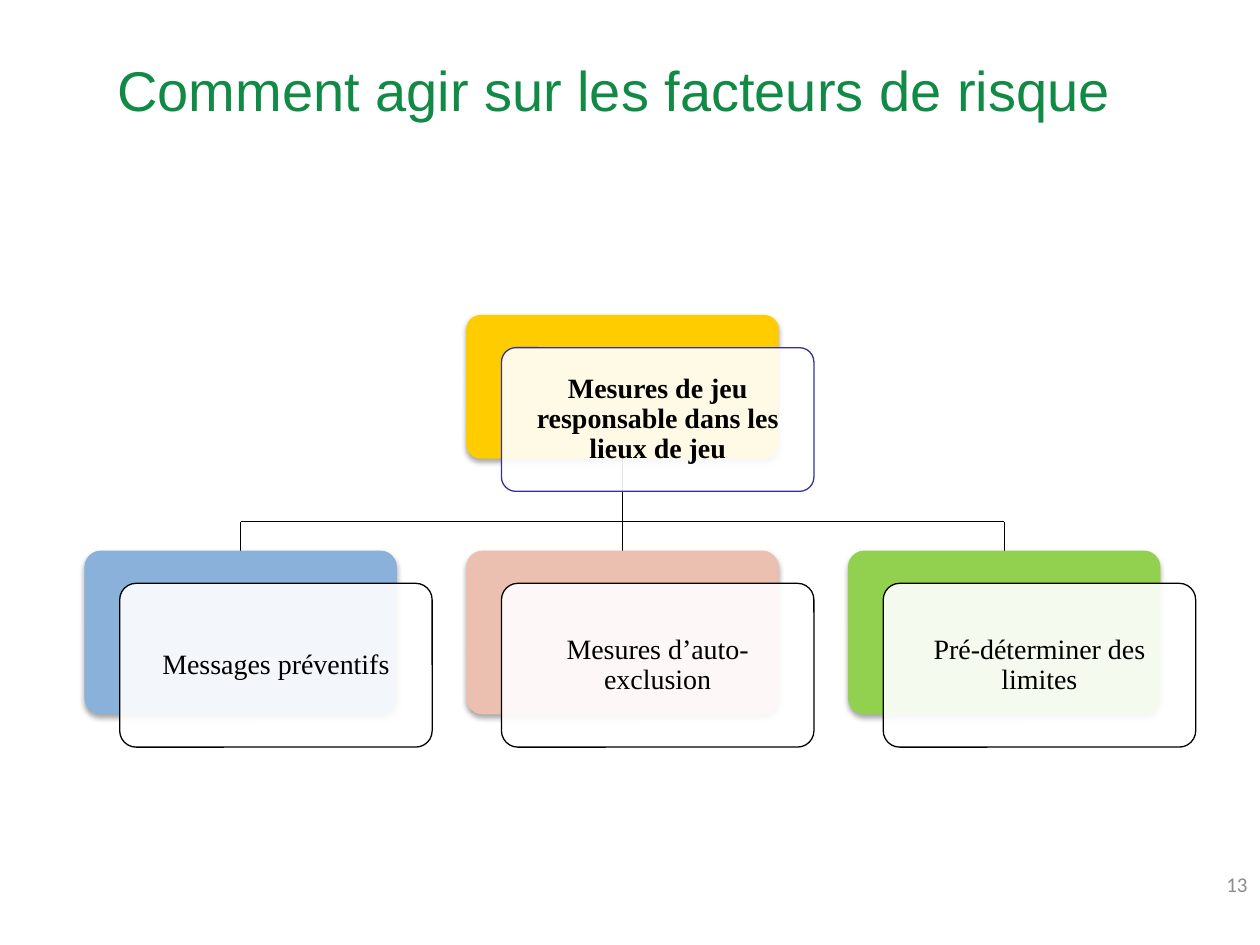
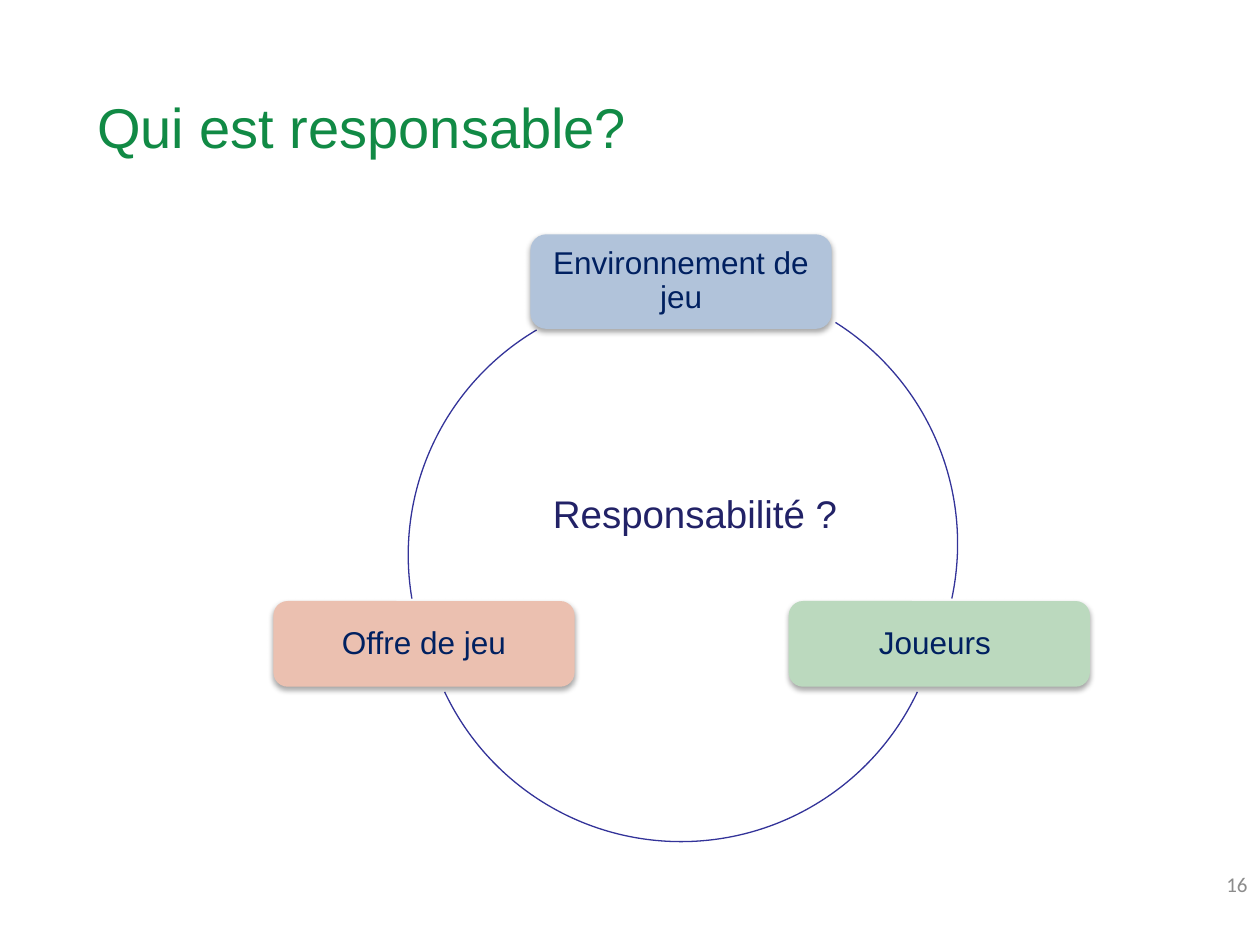
"""Builds two slides on responsible gambling: a measures tree and a responsibility cycle."""
from dataclasses import dataclass

from lxml.etree import SubElement
from pptx import Presentation
from pptx.dml.color import RGBColor
from pptx.enum.shapes import MSO_CONNECTOR, MSO_SHAPE
from pptx.enum.text import MSO_ANCHOR, MSO_AUTO_SIZE, PP_ALIGN
from pptx.oxml.ns import qn
from pptx.util import Emu, Pt

EMU_PER_PX = 9144
COLORS = {
    "title": "118A45",
    "number": "8C8C8C",
    "black": "000000",
    "white": "FFFFFF",
    "outline": "333399",
    "navy": "002060",
    "question": "222267",
    "yellow": "FFCC00",
    "blue": "8AB1DA",
    "salmon": "EBC0B0",
    "lime": "92D050",
    "steel": "B1C3DA",
    "mint": "BBD9BE",
}


@dataclass(frozen=True)
class Area:
    left: int
    top: int
    width: int
    height: int

    def emu(self) -> list[Emu]:
        return [px(side) for side in (self.left, self.top, self.width, self.height)]

    def shifted(self, right: int, down: int) -> "Area":
        return Area(self.left + right, self.top + down, self.width, self.height)


@dataclass(frozen=True)
class TextStyle:
    font: str
    size: int
    color: str
    bold: bool = False
    align: PP_ALIGN = PP_ALIGN.CENTER
    spacing: float | Pt | None = 0.9


@dataclass(frozen=True)
class Node:
    text: str
    area: Area
    color: str
    outline: str = "black"
    bold: bool = False


@dataclass(frozen=True)
class CycleArc:
    left: int
    top: int
    start: float
    end: float


TITLE = TextStyle("Arial", 32, "title", align=PP_ALIGN.LEFT, spacing=Pt(44))
NUMBER = TextStyle("Calibri", 12, "number", align=PP_ALIGN.RIGHT, spacing=None)
QUESTION = TextStyle("Arial", 22, "question", align=PP_ALIGN.LEFT, spacing=None)
CYCLE_LABEL = TextStyle("Arial", 18, "navy")

NUMBER_AREA = Area(767, 682, 233, 40)
LABEL_INSET = 7
CARD_RADIUS = 0.1
CARD_SHIFT = (28, 26)
TREE_BAR = 414

ROOT = Node("Mesures de jeu responsable dans les lieux de jeu",
            Area(370, 250, 248, 114), "yellow", "outline", True)
MEASURES = [
    Node(text, Area(67 + 303 * column, 437, 248, 130), color)
    for column, (text, color) in enumerate([
        ("Messages préventifs", "blue"),
        ("Mesures d’auto-exclusion", "salmon"),
        ("Pré-déterminer des limites", "lime"),
    ])
]

ARC_SIZE = 415
ARCS = [
    CycleArc(345, 224, 302.2, 12.1),
    CycleArc(333, 253, 25.3, 154.7),
    CycleArc(324, 233, 170.4, 239.4),
]
ACTORS = [
    Node("Environnement de jeu", Area(421, 186, 239, 75), "steel"),
    Node("Joueurs ", Area(626, 477, 239, 68), "mint"),
    Node("Offre de jeu", Area(217, 477, 239, 68), "salmon"),
]


def px(length: int) -> Emu:
    """Turn px into EMU."""
    return Emu(length * EMU_PER_PX)


def rgb(name: str) -> RGBColor:
    """Look up a named colour."""
    return RGBColor.from_string(COLORS[name])


def write(shape, text: str, style: TextStyle) -> None:
    """Write one styled run into the shape."""
    para = shape.text_frame.paragraphs[0]
    para.alignment = style.align
    if style.spacing is not None:
        para.line_spacing = style.spacing
    span = para.add_run()
    span.text = text
    span.font.name = style.font
    span.font.size = Pt(style.size)
    span.font.bold = style.bold
    span.font.color.rgb = rgb(style.color)


def write_label(shape, text: str, style: TextStyle) -> None:
    """Write a wrapped, vertically centred label with narrow insets."""
    frame = shape.text_frame
    frame.word_wrap = True
    frame.vertical_anchor = MSO_ANCHOR.MIDDLE
    frame.margin_left = frame.margin_right = px(LABEL_INSET)
    frame.margin_top = frame.margin_bottom = px(LABEL_INSET)
    write(shape, text, style)


def add_rounded(page, area: Area, color: str, radius: float | None = None):
    """Add a borderless rounded rectangle."""
    shape = page.shapes.add_shape(MSO_SHAPE.ROUNDED_RECTANGLE, *area.emu())
    if radius is not None:
        shape.adjustments[0] = radius
    shape.shadow.inherit = False
    shape.fill.solid()
    shape.fill.fore_color.rgb = rgb(color)
    shape.line.fill.background()
    return shape


def set_line(shape, color: str) -> None:
    """Give the shape a thin line."""
    shape.line.color.rgb = rgb(color)
    shape.line.width = Pt(0.75)


def cast_shadow(shape) -> None:
    """Add a soft shadow below the shape."""
    effects = shape._element.spPr.find(qn("a:effectLst"))
    shadow = SubElement(effects, qn("a:outerShdw"), blurRad="40000",
                        dist="23000", dir="5400000", rotWithShape="0")
    tint = SubElement(shadow, qn("a:srgbClr"), val=COLORS["black"])
    SubElement(tint, qn("a:alpha"), val="35000")


def add_card(page, node: Node) -> None:
    """Add a coloured plate with a translucent text card in front."""
    cast_shadow(add_rounded(page, node.area, node.color, CARD_RADIUS))
    card = add_rounded(page, node.area.shifted(*CARD_SHIFT), "white", CARD_RADIUS)
    tint = card._element.spPr.find(qn("a:solidFill"))[0]
    SubElement(tint, qn("a:alpha"), val="90000")
    set_line(card, node.outline)
    write_label(card, node.text, TextStyle("Times New Roman", 16, "black", node.bold))


def add_line(page, start: tuple[int, int], end: tuple[int, int]) -> None:
    """Add a straight tree line."""
    line = page.shapes.add_connector(
        MSO_CONNECTOR.STRAIGHT, *(px(value) for value in start + end))
    set_line(line, "black")
    SubElement(line._element.spPr, qn("a:effectLst"))


def add_arc(page, arc: CycleArc) -> None:
    """Add one open arc of the cycle."""
    area = Area(arc.left, arc.top, ARC_SIZE, ARC_SIZE)
    shape = page.shapes.add_shape(MSO_SHAPE.ARC, *area.emu())
    for index, angle in enumerate((arc.start, arc.end)):
        shape.adjustments[index] = angle * 0.6
    shape.shadow.inherit = False
    shape.fill.background()
    set_line(shape, "outline")


def add_page(deck, title: str, area: Area, number: int):
    """Add a slide with its title and page number."""
    page = deck.slides.add_slide(deck.slide_layouts.get_by_name("Title Only"))
    heading = page.shapes.title
    heading.left, heading.top, heading.width, heading.height = area.emu()
    heading.text_frame.auto_size = MSO_AUTO_SIZE.NONE
    heading.text_frame.vertical_anchor = MSO_ANCHOR.MIDDLE
    write(heading, title, TITLE)
    box = page.shapes.add_textbox(*NUMBER_AREA.emu())
    box.text_frame.word_wrap = True
    box.text_frame.vertical_anchor = MSO_ANCHOR.MIDDLE
    write(box, str(number), NUMBER)
    return page


def build_measures(deck) -> None:
    """Build the tree of responsible gambling measures."""
    page = add_page(deck, "Comment agir sur les facteurs de risque",
                    Area(83, -11, 845, 155), 13)
    centers = [node.area.left + node.area.width // 2 for node in MEASURES]
    root_center = ROOT.area.left + ROOT.area.width // 2
    add_line(page, (root_center, ROOT.area.top + ROOT.area.height),
             (root_center, TREE_BAR))
    add_line(page, (centers[0], TREE_BAR), (centers[-1], TREE_BAR))
    for center, node in zip(centers, MEASURES):
        add_line(page, (center, TREE_BAR), (center, node.area.top))
    for node in [ROOT, *MEASURES]:
        add_card(page, node)


def build_cycle(deck) -> None:
    """Build the cycle of responsible actors."""
    page = add_page(deck, "Qui est responsable?", Area(67, 19, 845, 155), 16)
    for arc in ARCS:
        add_arc(page, arc)
    for node in ACTORS:
        plate = add_rounded(page, node.area, node.color)
        cast_shadow(plate)
        write_label(plate, node.text, CYCLE_LABEL)
    box = page.shapes.add_textbox(*Area(429, 384, 248, 47).emu())
    box.text_frame.word_wrap = False
    write(box, "Responsabilité ?", QUESTION)


def main() -> None:
    """Build and save the deck."""
    deck = Presentation()
    deck.slide_width, deck.slide_height = px(1000), px(750)
    build_measures(deck)
    build_cycle(deck)
    deck.save("out.pptx")


if __name__ == "__main__":
    main()
